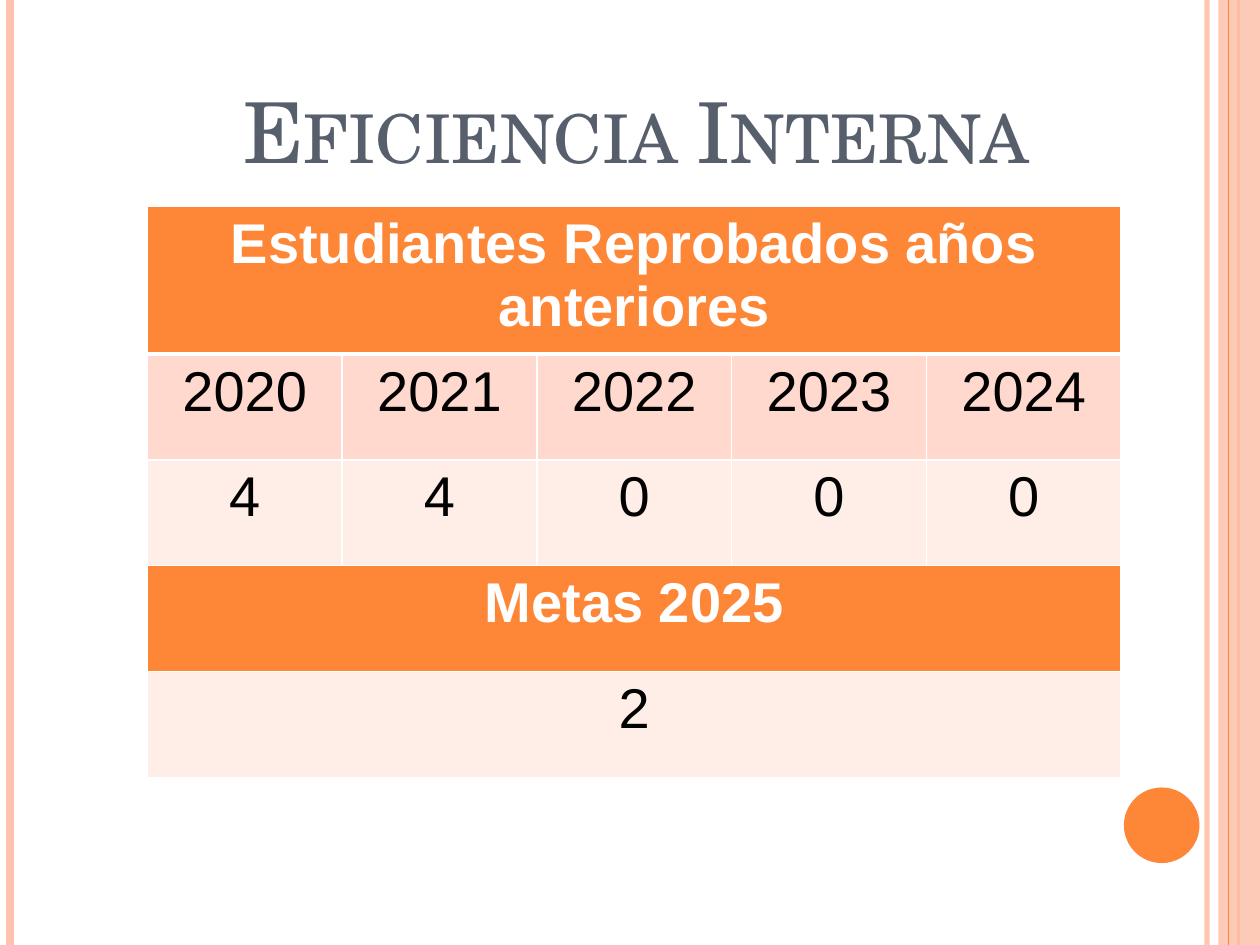
from lxml import etree
from pptx import Presentation
from pptx.dml.color import RGBColor
from pptx.enum.shapes import MSO_CONNECTOR, MSO_SHAPE
from pptx.enum.text import MSO_ANCHOR, PP_ALIGN
from pptx.oxml.ns import qn
from pptx.util import Inches, Pt

STRAIGHT = MSO_CONNECTOR.STRAIGHT
RECTANGLE = MSO_SHAPE.RECTANGLE
OVAL = MSO_SHAPE.OVAL
BOTTOM = MSO_ANCHOR.BOTTOM
CENTER = PP_ALIGN.CENTER

ORANGE = "FE8637"
PEACH = "FEC3AE"
SLATE = "575F6D"
ROSE = "FFD9CE"
PALE_ROSE = "FFEDE8"
WHITE = "FFFFFF"
BLACK = "000000"

TABLE_ROWS = [
    (["Estudiantes Reprobados años anteriores"], ORANGE, True, 1.17),
    (["2020", "2021", "2022", "2023", "2024"], ROSE, False, 0.84),
    (["4", "4", "0", "0", "0"], PALE_ROSE, False, 0.84),
    (["Metas 2025"], ORANGE, True, 0.84),
    (["2"], PALE_ROSE, False, 0.84),
]


def paint(color_format, color):
    color_format.rgb = RGBColor.from_string(color)


def fill_with(part, color):
    part.fill.solid()
    paint(part.fill.fore_color, color)


def set_opacity(part, percent):
    for color in part.element.spPr.iter(qn("a:srgbClr")):
        etree.SubElement(color, qn("a:alpha"), val=str(percent * 1000))


def style_text(text_frame, font_name, size, color, bold=False):
    paragraph = text_frame.paragraphs[0]
    paragraph.alignment = CENTER
    font = paragraph.runs[0].font
    font.name = font_name
    font.size = Pt(size)
    font.bold = bold
    paint(font.color, color)


def add_stripe(slide, x, top, height, color, width):
    stripe = slide.shapes.add_connector(
        STRAIGHT, Inches(x), Inches(top), Inches(x), Inches(top + height))
    paint(stripe.line.color, color)
    stripe.line.width = Pt(width)
    etree.SubElement(stripe.element.spPr, qn("a:effectLst"))
    return stripe


def add_solid(slide, kind, box, color):
    solid = slide.shapes.add_shape(kind, *map(Inches, box))
    solid.shadow.inherit = False
    fill_with(solid, color)
    solid.line.fill.background()
    return solid


def add_side_bands(slide, box):
    left, top, width, height = box
    right = left + width
    set_opacity(add_stripe(slide, right - 0.42, top, height, PEACH, 3), 93)
    add_stripe(slide, left + 0.08, top, height, PEACH, 4.5)
    add_stripe(slide, right - 0.17, top, height, ORANGE, 1.5)
    band = add_solid(slide, RECTANGLE, (right - 0.33, top, 0.33, height), PEACH)
    set_opacity(band, 87)
    add_stripe(slide, right - 0.25, top, height, ORANGE, 0.75)
    add_solid(slide, OVAL, (right - 1.08, top + height - 1.25, 0.6, 0.6), ORANGE)


def add_title(slide, box):
    title = slide.shapes.add_textbox(*map(Inches, box)).text_frame
    title.word_wrap = True
    title.vertical_anchor = BOTTOM
    title.text = "Eficiencia Interna"
    style_text(title, "TeX Gyre Schola", 48, SLATE)
    title.paragraphs[0].runs[0]._r.get_or_add_rPr().set("cap", "small")


def add_borders(cell, top, bottom):
    properties = cell._tc.get_or_add_tcPr()
    widths = {"a:lnL": 1, "a:lnR": 1, "a:lnT": top, "a:lnB": bottom}
    for index, (side, width) in enumerate(widths.items()):
        border = etree.Element(qn(side), w=str(Pt(width)))
        color = etree.SubElement(border, qn("a:solidFill"))
        etree.SubElement(color, qn("a:srgbClr"), val=WHITE)
        properties.insert(index, border)


def add_results_table(slide, box):
    column_count = max(len(row[0]) for row in TABLE_ROWS)
    table = slide.shapes.add_table(
        len(TABLE_ROWS), column_count, *map(Inches, box)).table
    for column in table.columns:
        column.width = Inches(box[2] / column_count)
    for index, (texts, fill, heading, height) in enumerate(TABLE_ROWS):
        table.rows[index].height = Inches(height)
        if len(texts) == 1:
            table.cell(index, 0).merge(table.cell(index, column_count - 1))
        for position, text in enumerate(texts):
            cell = table.cell(index, position)
            cell.text_frame.text = text
            style_text(cell.text_frame, "Arial", 32,
                       WHITE if heading else BLACK, heading)
            fill_with(cell, fill)
            add_borders(cell, 3 if index == 1 else 1, 3 if index == 0 else 1)


def main():
    presentation = Presentation()
    presentation.slide_width = Inches(10)
    presentation.slide_height = Inches(7.5)
    slide = presentation.slides.add_slide(presentation.slide_layouts[6])
    fill_with(slide.background, WHITE)
    add_side_bands(slide, (0, 0, 10, 7.5))
    add_title(slide, (0.55, 0.23, 9, 1.25))
    add_results_table(slide, (1.17, 1.64, 7.73, 4.54))
    presentation.save("out.pptx")


if __name__ == "__main__":
    main()
